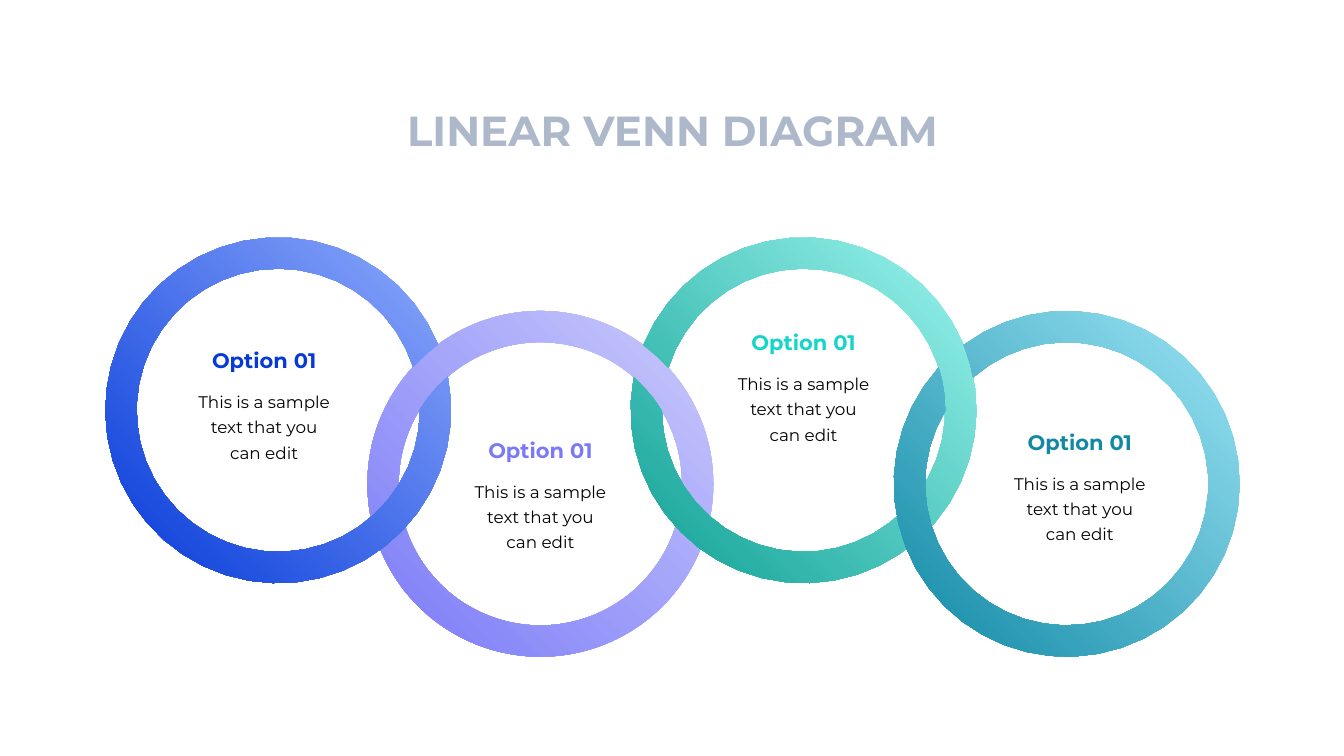
import math

from lxml import etree
from pptx import Presentation
from pptx import util as u
from pptx.dml.color import RGBColor
from pptx.enum import shapes, text
from pptx.oxml import ns

BLUE, SKY = RGBColor(0x05, 0x3A, 0xD8), RGBColor(0x8E, 0xAA, 0xFC)
VIOLET, LILAC = RGBColor(0x7A, 0x7A, 0xF7), RGBColor(0xCA, 0xCA, 0xFC)
GREEN, MINT = RGBColor(0x10, 0xA0, 0x95), RGBColor(0x9B, 0xF5, 0xEE)
TEAL, AQUA = RGBColor(0x11, 0x89, 0xA5), RGBColor(0x9C, 0xE4, 0xF5)
TURQUOISE = RGBColor(0x15, 0xD5, 0xC6)
GREY, BLACK = RGBColor(0xAD, 0xB9, 0xCA), RGBColor(0, 0, 0)

OUTER = 3.43 / 2
INNER = OUTER - 0.31
ARC_STEP = math.radians(8)
FIRST, SECOND, THIRD, FOURTH = (
    complex(2.76, 4.07), complex(5.36, 4.8), complex(7.97, 4.07), complex(10.58, 4.8))
RINGS = [
    (SECOND, None, VIOLET, LILAC),
    (THIRD, SECOND, GREEN, MINT),
    (FIRST, SECOND, BLUE, SKY),
    (FOURTH, THIRD, TEAL, AQUA),
]
OPTIONS = [
    (2.62, 3.4, BLUE),
    (5.36, 4.29, VIOLET),
    (7.97, 3.22, TURQUOISE),
    (10.71, 4.21, TEAL),
]


def upper_crossing(center, radius, other, other_radius):
    """Return the higher point where two circles meet."""
    gap = abs(other - center)
    along = (gap ** 2 + radius ** 2 - other_radius ** 2) / (2 * gap)
    rise = math.sqrt(radius ** 2 - along ** 2)
    unit = (other - center) / gap
    return min((center + unit * complex(along, side) for side in (rise, -rise)),
               key=lambda point: point.imag)


def arc(center, radius, start, end, long_way=False):
    """Return points on a circle from start up to, but not including, end."""
    first, last = (math.atan2((p - center).imag, (p - center).real) for p in (start, end))
    sweep = math.remainder(last - first, math.tau)
    if long_way:
        sweep -= math.copysign(math.tau, sweep)
    steps = math.ceil(abs(sweep) / ARC_STEP)
    angles = (first + sweep * step / steps for step in range(steps))
    return [center + radius * complex(math.cos(a), math.sin(a)) for a in angles]


def cut_ring(center, other):
    """Return the outline of a ring that passes under its neighbour once."""
    outer_a, outer_b = (upper_crossing(center, OUTER, other, r) for r in (OUTER, INNER))
    inner_a, inner_b = (upper_crossing(center, INNER, other, r) for r in (OUTER, INNER))
    return (arc(center, OUTER, outer_b, outer_a, True)
            + arc(other, OUTER, outer_a, inner_a)
            + arc(center, INNER, inner_a, inner_b, True)
            + arc(other, INNER, inner_b, outer_b))


class VennSlide:
    """Draws the rings and texts of the page in one style."""

    def __init__(self, page, font="Montserrat"):
        self.page = page
        self.font = font

    def ring(self, center, other, dark, light):
        """Add a gradient ring, cut where it runs under another one."""
        if other is None:
            size = u.Inches(2 * OUTER)
            shape = self.page.shapes.add_shape(
                shapes.MSO_SHAPE.DONUT, u.Inches(center.real - OUTER),
                u.Inches(center.imag - OUTER), size, size)
            shape.adjustments[0] = (OUTER - INNER) / (2 * OUTER)
        else:
            points = [(u.Inches(p.real), u.Inches(p.imag)) for p in cut_ring(center, other)]
            builder = self.page.shapes.build_freeform(*points[0])
            builder.add_line_segments(points[1:], close=True)
            shape = builder.convert_to_shape()
        shape.shadow.inherit = False
        shape.line.fill.background()
        self.corner_gradient(shape, dark, light)

    def corner_gradient(self, shape, dark, light):
        """Fill a shape with a round gradient from its lower left corner."""
        shape.fill.gradient()
        for stop, color, position in zip(shape.fill.gradient_stops, (dark, light), (0, 1)):
            stop.color.rgb = color
            stop.position = position
        gradient = shape.element.spPr.find(ns.qn("a:gradFill"))
        linear = gradient.find(ns.qn("a:lin"))
        circle = etree.Element(ns.qn("a:path"), {"path": "circle"})
        etree.SubElement(circle, ns.qn("a:fillToRect"), {"t": "100000", "r": "100000"})
        gradient.replace(linear, circle)

    def label(self, words, center, top, width, height, size, color,
              bold=False, wrap=True, spacing=None):
        """Add a centred text box."""
        box = self.page.shapes.add_textbox(
            u.Inches(center - width / 2), u.Inches(top), u.Inches(width), u.Inches(height))
        frame = box.text_frame
        frame.word_wrap = wrap
        frame.auto_size = text.MSO_AUTO_SIZE.SHAPE_TO_FIT_TEXT
        para = frame.paragraphs[0]
        para.text = words
        para.alignment = text.PP_ALIGN.CENTER
        para.line_spacing = spacing
        para.font.name = self.font
        para.font.size = u.Pt(size)
        para.font.bold = bold
        para.font.color.rgb = color

    def option(self, center, top, color):
        """Add an option heading with its sample text."""
        self.label("Option 01", center, top, 1.25, 0.35, 15, color, bold=True, wrap=False)
        self.label("This is a sample text that you can edit", center, top + 0.39,
                   1.52, 0.83, 12, BLACK, spacing=u.Pt(18))


def main():
    """Build and save the deck."""
    deck = Presentation()
    deck.slide_width, deck.slide_height = u.Inches(13.33), u.Inches(7.5)
    venn = VennSlide(deck.slides.add_slide(deck.slide_layouts[6]))
    for ring in RINGS:
        venn.ring(*ring)
    for option in OPTIONS:
        venn.option(*option)
    venn.label("LINEAR VENN DIAGRAM", 6.67, 0.99, 8.46, 0.65, 30, GREY, bold=True)
    deck.save("out.pptx")


if __name__ == "__main__":
    main()
